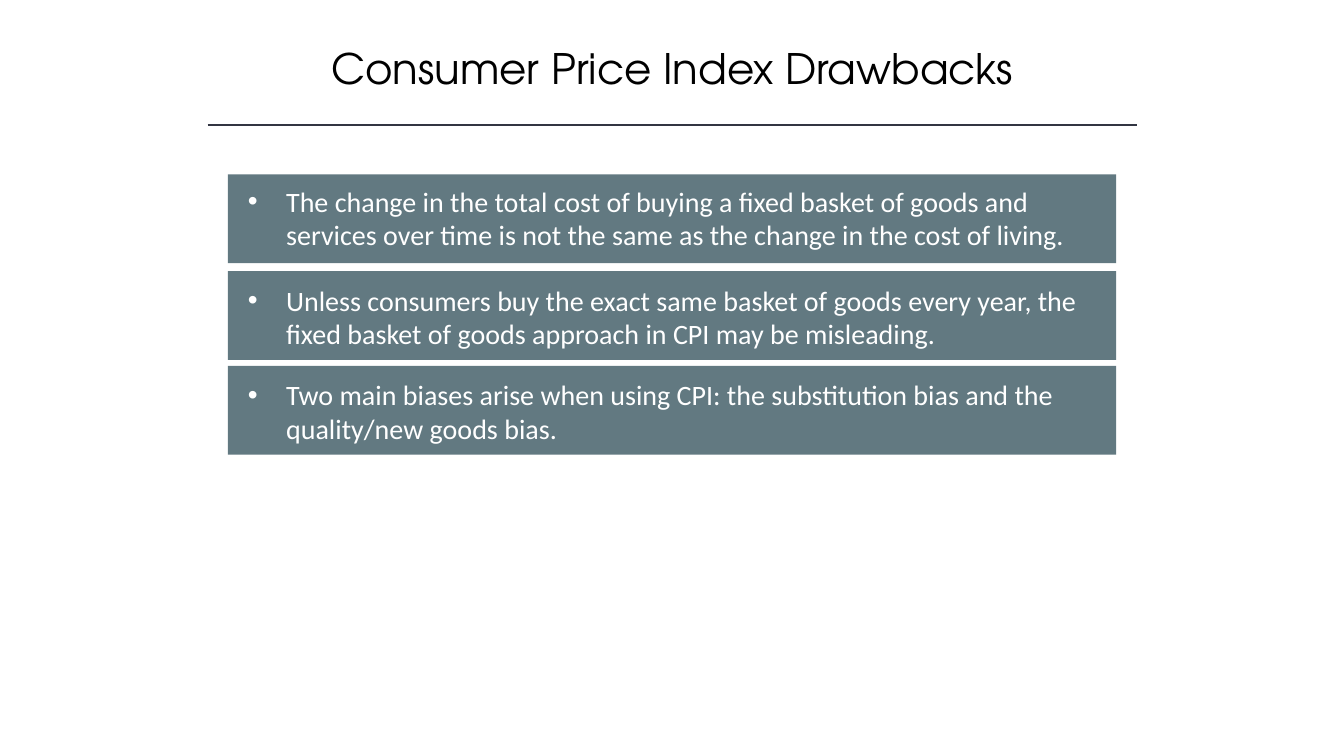
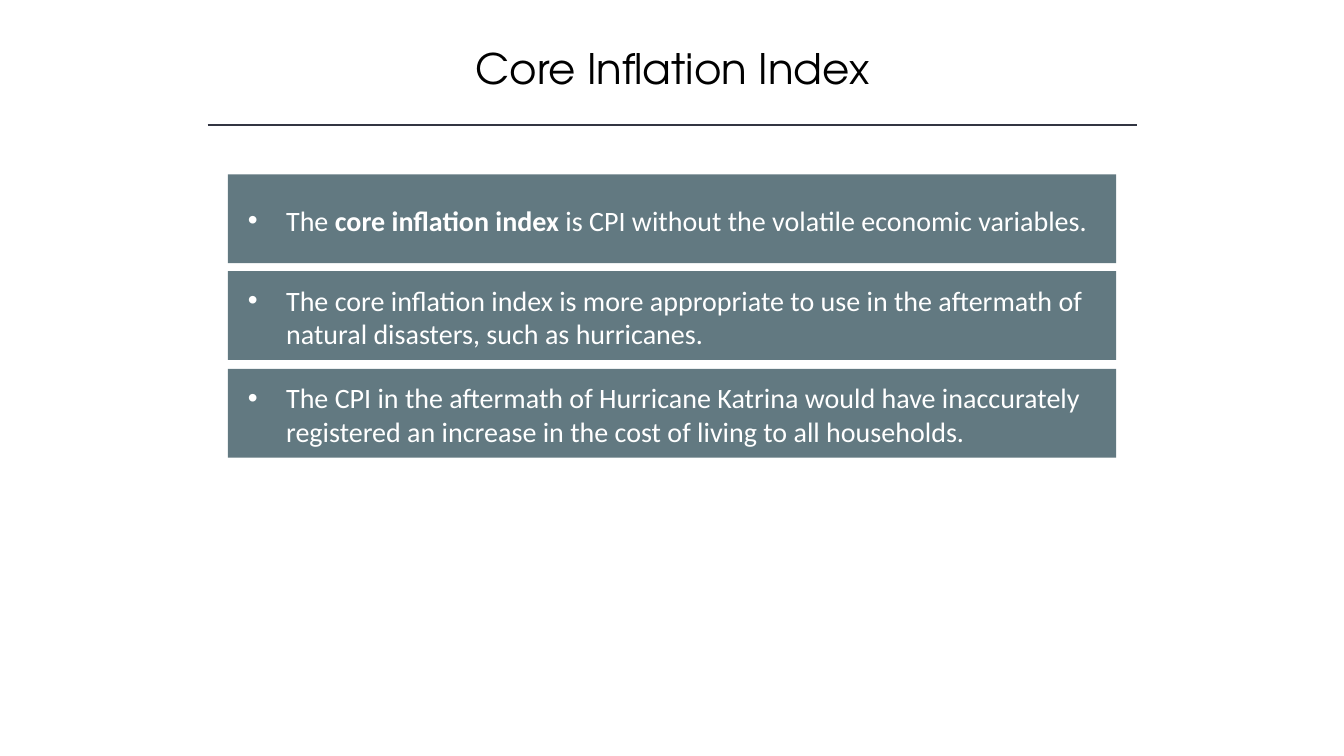
from dataclasses import dataclass

from pptx import Presentation
from pptx import util as u
from pptx.dml.color import RGBColor
from pptx.enum import shapes, text
from pptx.oxml.ns import qn

# Shared style: 100 px to the inch
EMU_PER_PX = 9144
SLIDE_WIDTH, SLIDE_HEIGHT = 1333, 750
TITLE_FONT, BODY_FONT = "TeX Gyre Adventor", "Calibri"
BLACK, WHITE, RULE, BAND = "000000", "FFFFFF", "323542", "627981"
BAND_LEFT, BAND_WIDTH, BAND_HEIGHT = 226, 881, 88
TEXT_LEFT, TEXT_WIDTH = 236, 854
TEXT_HEIGHTS = {1: 44, 2: 77}
BULLET_INDENT = 38


@dataclass(frozen=True)
class Run:
    text: str
    bold: bool = False


@dataclass(frozen=True)
class Band:
    top: int
    text_top: int
    runs: tuple[Run, ...]
    lines: int = 2


@dataclass(frozen=True)
class Page:
    title: str
    bands: tuple[Band, ...]


PAGES = (
    Page("Consumer Price Index Drawbacks", (
        Band(173, 178, (Run("The change in the total cost of buying a fixed basket of goods and "
                            "services over time is not the same as the change in the cost of "
                            "living."),)),
        Band(269, 276, (Run("Unless consumers buy the exact same basket of goods every year, the "
                            "fixed basket of goods approach in CPI may be misleading."),)),
        Band(363, 370, (Run("Two main biases arise when using CPI: the substitution bias and the "
                            "quality/new goods bias."),)),
    )),
    Page("Core Inflation Index", (
        Band(173, 197, (Run("The "), Run("core inflation index ", bold=True),
                        Run("is CPI without the volatile economic variables.")), lines=1),
        Band(269, 276, (Run("The core inflation index is more appropriate to use in the aftermath "
                            "of natural disasters, such as hurricanes."),)),
        Band(366, 373, (Run("The CPI in the aftermath of Hurricane Katrina would have inaccurately "
                            "registered an increase in the cost of living to all households."),)),
    )),
)


def px(length: int) -> u.Emu:
    return u.Emu(length * EMU_PER_PX)


def color(value: str) -> RGBColor:
    return RGBColor.from_string(value)


def add_run(paragraph, run: Run, font_name: str, size: int, font_color: str) -> None:
    part = paragraph.add_run()
    part.text = run.text
    part.font.name = font_name
    part.font.size = u.Pt(size)
    part.font.bold = run.bold
    part.font.color.rgb = color(font_color)


def add_title(slide, title: str) -> None:
    shape = slide.shapes.add_textbox(px(167), px(37), px(1000), px(61))
    shape.text_frame.word_wrap = True
    paragraph = shape.text_frame.paragraphs[0]
    paragraph.alignment = text.PP_ALIGN.CENTER
    add_run(paragraph, Run(title), TITLE_FONT, 30, BLACK)


def add_rule(slide) -> None:
    rule = slide.shapes.add_connector(
        shapes.MSO_CONNECTOR.STRAIGHT, px(206), px(124), px(1128), px(124))
    rule.line.color.rgb = color(RULE)
    rule.line.width = u.Pt(1)
    properties = rule._element.spPr
    properties.append(properties.makeelement(qn("a:effectLst"), {}))


def add_rectangle(group, left: int, top: int, width: int, height: int):
    shape = group.shapes.add_shape(
        shapes.MSO_SHAPE.RECTANGLE, px(left), px(top), px(width), px(height))
    shape.shadow.inherit = False
    shape.fill.solid()
    shape.fill.fore_color.rgb = color(BAND)
    shape.line.fill.background()
    return shape


def add_bullet(paragraph) -> None:
    properties = paragraph._p.get_or_add_pPr()
    properties.set("marL", str(px(BULLET_INDENT)))
    properties.set("indent", str(-px(BULLET_INDENT)))
    bullet_color = properties.makeelement(qn("a:buClr"), {})
    bullet_color.append(properties.makeelement(qn("a:srgbClr"), {"val": WHITE}))
    properties.append(bullet_color)
    properties.append(properties.makeelement(qn("a:buFont"), {"typeface": "Arial"}))
    properties.append(properties.makeelement(qn("a:buChar"), {"char": "•"}))


def add_band(slide, band: Band) -> None:
    group = slide.shapes.add_group_shape()
    add_rectangle(group, BAND_LEFT, band.top, BAND_WIDTH, BAND_HEIGHT)
    shape = add_rectangle(
        group, TEXT_LEFT, band.text_top, TEXT_WIDTH, TEXT_HEIGHTS[band.lines])
    frame = shape.text_frame
    frame.word_wrap = True
    frame.vertical_anchor = text.MSO_ANCHOR.TOP
    paragraph = frame.paragraphs[0]
    paragraph.alignment = text.PP_ALIGN.LEFT
    add_bullet(paragraph)
    for run in band.runs:
        add_run(paragraph, run, BODY_FONT, 20, WHITE)


def main() -> None:
    presentation = Presentation()
    presentation.slide_width = px(SLIDE_WIDTH)
    presentation.slide_height = px(SLIDE_HEIGHT)
    blank = presentation.slide_layouts[6]
    for page in PAGES:
        slide = presentation.slides.add_slide(blank)
        add_title(slide, page.title)
        add_rule(slide)
        for band in page.bands:
            add_band(slide, band)
    presentation.save("out.pptx")


if __name__ == "__main__":
    main()
